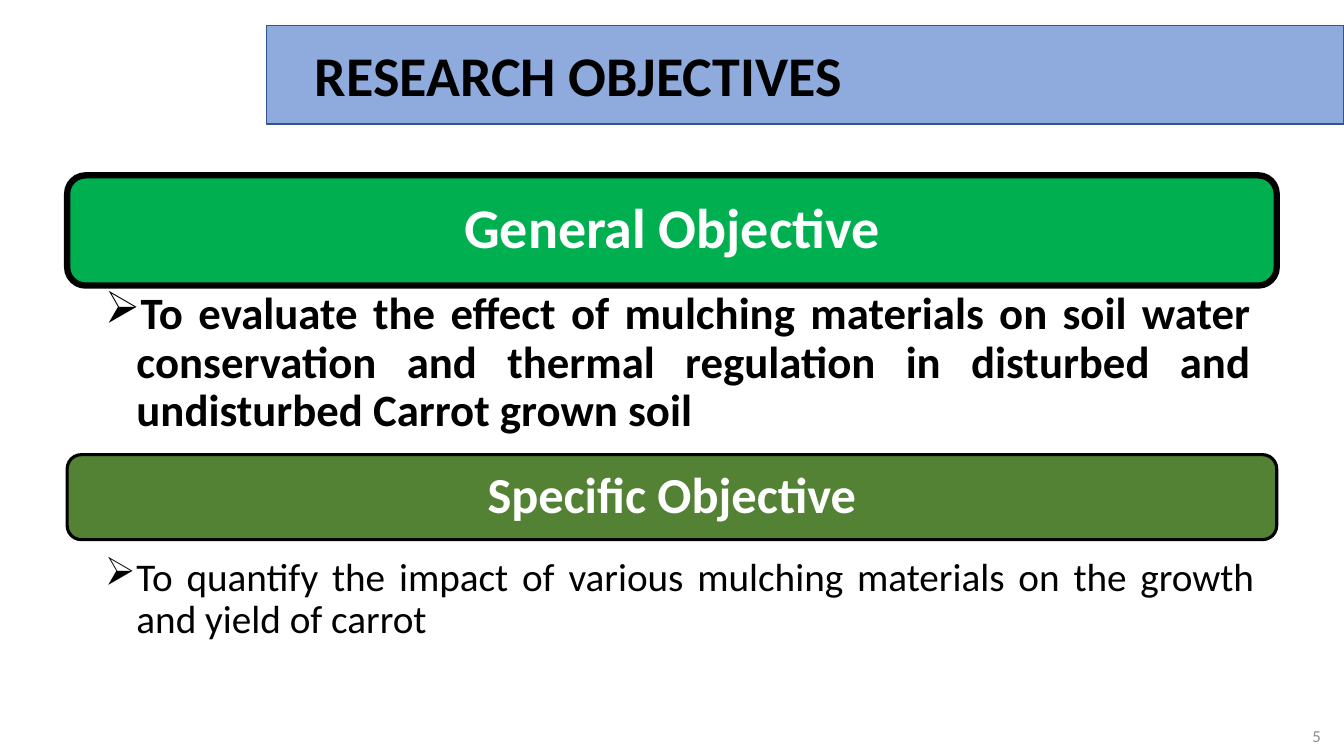
from lxml import etree
from pptx import Presentation
from pptx import util as u
from pptx.dml.color import RGBColor
from pptx.enum import shapes, text
from pptx.oxml import ns

PX = 9525  # EMU per px, 96 px to the inch
BLACK = RGBColor(0x00, 0x00, 0x00)
WHITE = RGBColor(0xFF, 0xFF, 0xFF)
GREY = RGBColor(0x8C, 0x8C, 0x8C)
BLUE = RGBColor(0x8F, 0xAA, 0xDC)
NAVY = RGBColor(0x32, 0x54, 0x91)
GREEN = RGBColor(0x00, 0xB0, 0x50)
OLIVE = RGBColor(0x54, 0x82, 0x35)
LEFT, WIDTH = 64, 1152
INDENT = 30


def px(*lengths):
    return [u.Emu(n * PX) for n in lengths]


def write(sp, words, size, color, bold, align, margins, anchor=text.MSO_ANCHOR.MIDDLE):
    """Set the single paragraph of a shape and return it."""
    tf = sp.text_frame
    tf.text = words
    tf.word_wrap = True
    tf.auto_size = text.MSO_AUTO_SIZE.NONE
    tf.vertical_anchor = anchor
    tf.margin_left, tf.margin_top, tf.margin_right, tf.margin_bottom = px(*margins)
    p = tf.paragraphs[0]
    p.alignment = align
    font = p.runs[0].font
    font.name, font.size, font.bold = "Calibri", u.Pt(size), bold
    font.color.rgb = color
    return p


prs = Presentation()
prs.slide_width, prs.slide_height = px(1280, 720)
s = prs.slides.add_slide(prs.slide_layouts[5])

title = s.shapes.title
title.left, title.top, title.width, title.height = px(254, 24, 1026, 94)
title.fill.solid()
title.fill.fore_color.rgb = BLUE
title.line.color.rgb = NAVY
title.line.width = u.Pt(1)
write(title, "RESEARCH OBJECTIVES", 40, BLACK, True, text.PP_ALIGN.LEFT, (46, 5, 10, 5))

# heading, top, height, fill, line width, text size
headings = [
    ("General Objective", 167, 105, GREEN, 4.5, 40),
    ("Specific Objective", 433, 81, OLIVE, 2.25, 36),
]
for words, top, height, fill, line, size in headings:
    sp = s.shapes.add_shape(shapes.MSO_SHAPE.ROUNDED_RECTANGLE, *px(LEFT, top, WIDTH, height))
    sp.shadow.inherit = False
    sp.fill.solid()
    sp.fill.fore_color.rgb = fill
    sp.line.color.rgb = BLACK
    sp.line.width = u.Pt(line)
    p = write(sp, words, size, WHITE, True, text.PP_ALIGN.CENTER, (16, 10, 16, 10))
    p.line_spacing = 0.9

# objective, top, height, text size, bold, right margin
objectives = [
    ("To evaluate the effect of mulching materials on soil water conservation and "
     "thermal regulation in disturbed and undisturbed Carrot grown soil",
     273, 150, 32, True, 24),
    ("To quantify the impact of various mulching materials on the growth and yield of carrot",
     527, 147, 28, False, 21),
]
for words, top, height, size, bold, right in objectives:
    sp = s.shapes.add_textbox(*px(LEFT, top, WIDTH, height))
    p = write(sp, words, size, BLACK, bold, text.PP_ALIGN.JUSTIFY, (36, 4, right, 4),
              text.MSO_ANCHOR.TOP)
    pPr = p._p.get_or_add_pPr()
    pPr.set("marL", str(INDENT * PX))
    pPr.set("indent", str(-INDENT * PX))
    etree.SubElement(pPr, ns.qn("a:buChar"), char="➢")
    p.line_spacing = 0.9

number = s.shapes.add_textbox(*px(980, 682, 288, 38))
write(number, "5", 12, GREY, False, text.PP_ALIGN.RIGHT, (10, 5, 10, 5))

prs.save("out.pptx")
